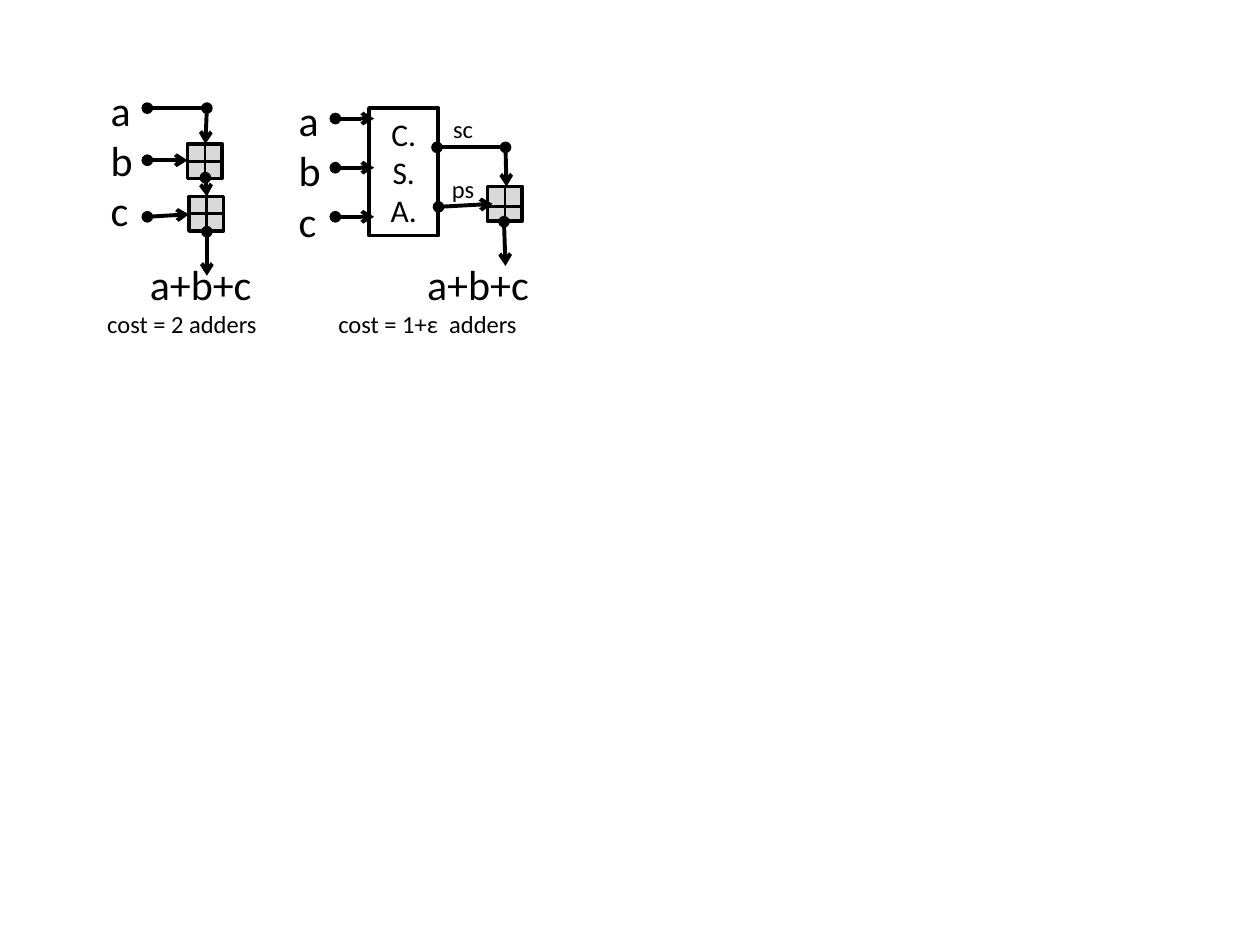
from lxml import etree
from pptx import Presentation
from pptx import util as u
from pptx.dml import color
from pptx.enum import shapes, text
from pptx.oxml import ns

BLACK, GREY = "000000", "D9D9D9"
SIDE = 0.7

ADDERS = [(3.78, 2.9, 0), (3.81, 3.96, 0), (9.83, 3.76, 0.05)]
ARROWS = [
    (4.14, 3.58, 4.17, 3.96),
    (2.97, 3.23, 3.78, 3.23),
    (2.97, 4.37, 3.81, 4.32),
    (4.17, 4.67, 4.17, 5.56),
    (4.17, 2.18, 4.14, 2.9),
    (10.19, 2.97, 10.21, 3.76),
    (8.84, 4.17, 9.93, 4.11),
    (10.16, 4.47, 10.19, 5.36),
] + [(6.76, 2.39 + 0.99 * i, 7.54, 2.39 + 0.99 * i) for i in range(3)]
WIRES = [(8.81, 2.97, 10.21, 2.97), (2.97, 2.18, 4.17, 2.18)]
CSA = ("C.\vS.\vA.", (7.44, 2.18, 1.4, 2.57))

LEFT, MID = text.PP_ALIGN.LEFT, text.PP_ALIGN.CENTER
STYLES = {
    "input": (24, LEFT, 0.58, 3.33),
    "sum": (24, LEFT, 3.15, 1.27),
    "cost": (14, MID, 5.36, 0.86),
    "wire": (14, MID, 1.19, 0.86),
}
LABELS = [
    ("a\nb\nc", "input", 5.77, 1.78),
    ("a\nb\nc", "input", 1.98, 1.57),
    ("a+b+c", "sum", 8.36, 5.08),
    ("a+b+c", "sum", 2.77, 5.08),
    ("cost = 1+ε  adders", "cost", 5.94, 6.1),
    ("cost = 2 adders", "cost", 0.99, 6.1),
    ("ps", "wire", 8.74, 3.38),
    ("sc", "wire", 8.74, 2.18),
]

deck = Presentation()
deck.slide_width, deck.slide_height = u.Cm(25.4), u.Cm(19.05)
slide = deck.slides.add_slide(deck.slide_layouts[6])


def paint(part, tint):
    part.solid()
    part.fore_color.rgb = color.RGBColor.from_string(tint)


def cms(nums):
    return [u.Cm(n) for n in nums]


def write(frame, words, size, align):
    frame.text = words
    for para in frame.paragraphs:
        para.alignment = align
        for run in para.runs:
            form = {"name": "Calibri", "size": u.Pt(size)}
            for key, val in form.items():
                setattr(run.font, key, val)
            paint(run.font.fill, BLACK)


def box(spot, weight, tint=None):
    rect = slide.shapes.add_shape(shapes.MSO_SHAPE.RECTANGLE, *cms(spot))
    rect.shadow.inherit = False
    if tint:
        paint(rect.fill, tint)
    else:
        rect.fill.background()
    paint(rect.line.fill, BLACK)
    rect.line.width = u.Pt(weight)
    return rect


def join(ends, weight, **tips):
    wire = slide.shapes.add_connector(shapes.MSO_CONNECTOR.STRAIGHT, *cms(ends))
    paint(wire.line.fill, BLACK)
    wire.line.width = u.Pt(weight)
    for tag, kind in tips.items():
        etree.SubElement(wire.line._ln, ns.qn(f"a:{tag}"), type=kind)
    etree.SubElement(wire._element.spPr, ns.qn("a:effectLst"))


for x, y, drop in ADDERS:
    box((x, y, SIDE, SIDE), 2, GREY)
    midx, midy = x + SIDE / 2, y + SIDE / 2 + drop
    join((midx, y, midx, y + SIDE), 1.5)
    join((x, midy, x + SIDE, midy), 1.5)

for ends in ARROWS:
    join(ends, 2.25, headEnd="oval", tailEnd="arrow")
for ends in WIRES:
    join(ends, 2.25, headEnd="oval")

words, spot = CSA
frame = box(spot, 2.25).text_frame
frame.vertical_anchor = text.MSO_ANCHOR.MIDDLE
write(frame, words, 18, MID)

for words, style, x, y in LABELS:
    size, align, wide, high = STYLES[style]
    frame = slide.shapes.add_textbox(*cms((x, y, wide, high))).text_frame
    frame.word_wrap = True
    write(frame, words, size, align)

deck.save("out.pptx")
